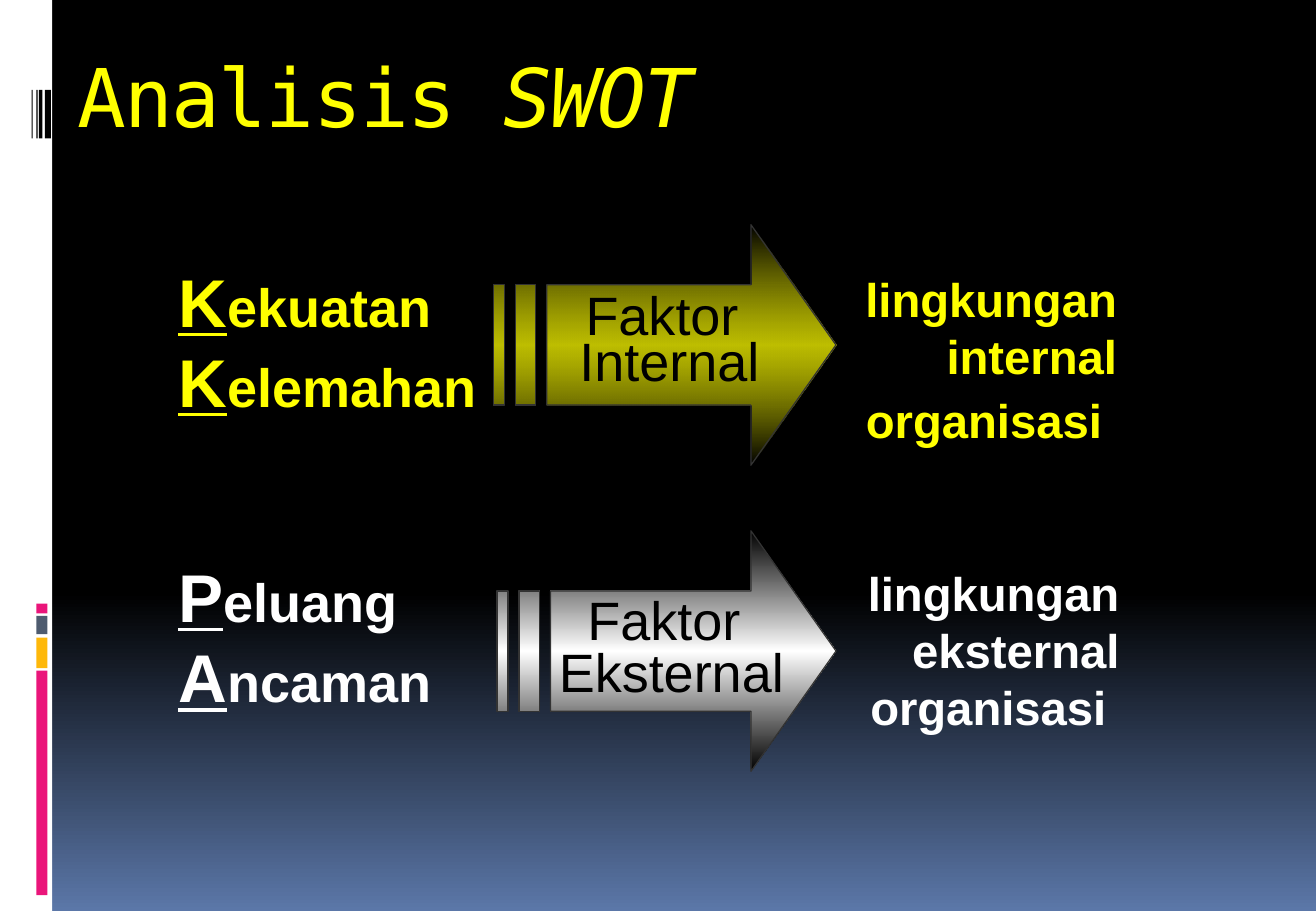
from lxml import etree
from pptx import Presentation
from pptx.dml.color import RGBColor
from pptx.enum.shapes import MSO_SHAPE
from pptx.enum.text import MSO_ANCHOR, PP_ALIGN
from pptx.oxml.ns import qn
from pptx.util import Inches, Pt

BLACK = RGBColor(0x00, 0x00, 0x00)
WHITE = RGBColor(0xFF, 0xFF, 0xFF)
YELLOW = RGBColor(0xFF, 0xFF, 0x00)
BLUE = RGBColor(0x5B, 0x77, 0xA8)
PINK = RGBColor(0xEA, 0x15, 0x7A)
AMBER = RGBColor(0xFE, 0xB8, 0x0A)
SLATE = RGBColor(0x4E, 0x5B, 0x6F)
OUTLINE = RGBColor(0x33, 0x33, 0x33)


def set_gradient(fill, element, stops):
    """Fill from top to bottom; stops are (percent, colour, opacity percent)."""
    fill.gradient()
    fill.gradient_angle = 270
    stop_list = element.find(".//" + qn("a:gsLst"))
    for old_stop in list(stop_list):
        stop_list.remove(old_stop)
    for percent, color, opacity in stops:
        stop = etree.SubElement(stop_list, qn("a:gs"), pos=str(percent * 1000))
        rgb = etree.SubElement(stop, qn("a:srgbClr"), val=str(color))
        if opacity < 100:
            etree.SubElement(rgb, qn("a:alpha"), val=str(opacity * 1000))


def write_text(shape, paragraphs, color, font="Arial", bold=False, wrap=True,
               align=PP_ALIGN.LEFT, anchor=MSO_ANCHOR.TOP, line_spacing=1.0,
               space_before=0, tracking=0):
    """Each paragraph is a list of (text, size, format flags) runs."""
    frame = shape.text_frame
    frame.word_wrap = wrap
    frame.vertical_anchor = anchor
    for index, runs in enumerate(paragraphs):
        para = frame.add_paragraph() if index else frame.paragraphs[0]
        para.alignment = align
        para.line_spacing = line_spacing
        para.space_before = Pt(space_before)
        for text, size, flags in runs:
            span = para.add_run()
            span.text = text
            span.font.name = font
            span.font.size = Pt(size)
            span.font.bold = bold
            span.font.italic = "i" in flags
            span.font.underline = "u" in flags
            span.font.color.rgb = color
            if tracking:
                span.font._element.set("spc", str(tracking * 100))


deck = Presentation()
deck.slide_width, deck.slide_height = Inches(10.83), Inches(7.5)
page = deck.slides.add_slide(deck.slide_layouts[6])
set_gradient(page.background.fill, page.element,
             [(0, BLACK, 100), (65, BLACK, 100), (100, BLUE, 100)])

# Side strip with its coloured blocks and thin bars
side_blocks = [
    (0, 0, 0.43, 7.5, WHITE),
    (0.3, 5.52, 0.09, 1.85, PINK),
    (0.3, 5.25, 0.09, 0.25, AMBER),
    (0.3, 5.07, 0.09, 0.15, SLATE),
    (0.3, 4.97, 0.09, 0.08, PINK),
    (0.37, 0.74, 0.05, 0.4, BLACK),
    (0.32, 0.74, 0.03, 0.4, BLACK),
    (0.3, 0.74, 0.01, 0.4, BLACK),
    (0.26, 0.74, 0.01, 0.4, BLACK),
]
for left, top, width, height, color in side_blocks:
    block = page.shapes.add_shape(MSO_SHAPE.RECTANGLE, Inches(left), Inches(top),
                                  Inches(width), Inches(height))
    block.shadow.inherit = False
    block.fill.solid()
    block.fill.fore_color.rgb = color
    block.line.fill.background()

title = page.shapes.add_textbox(Inches(0.54), Inches(0.29), Inches(9.71), Inches(1.06))
title.text_frame.margin_top = Inches(0.09)
write_text(title, [[("Analisis ", 48, ""), ("SWOT", 48, "i")]], YELLOW,
           font="DejaVu Sans Mono", tracking=-1)

# Striped arrows: left edge, top, middle colour and opacity, second word, line spacing
arrows = [
    (4.06, 1.85, YELLOW, 74, "Internal", 0.7),
    (4.09, 4.37, WHITE, 100, "Eksternal", 0.8),
]
for left, top, color, opacity, word, line_spacing in arrows:
    neck, tip = 6.18, 6.88
    shaft_top, middle, shaft_bottom, bottom = (top + step for step in (0.495, 0.99, 1.485, 1.98))
    body = left + 0.44
    contours = [[(neck, top), (neck, shaft_top), (body, shaft_top), (body, shaft_bottom),
                 (neck, shaft_bottom), (neck, bottom), (tip, middle)]]
    for start, end in ((0.18, 0.35), (0, 0.09)):
        contours.append([(left + start, shaft_top), (left + start, shaft_bottom),
                         (left + end, shaft_bottom), (left + end, shaft_top)])
    builder = page.shapes.build_freeform(Inches(neck), Inches(top))
    for index, contour in enumerate(contours):
        points = [(Inches(x), Inches(y)) for x, y in contour]
        if index:
            builder.move_to(*points[0])
        builder.add_line_segments(points[1:], close=True)
    arrow = builder.convert_to_shape()
    arrow.shadow.inherit = False
    set_gradient(arrow.fill, arrow.element,
                 [(0, BLACK, 100), (50, color, opacity), (100, BLACK, 100)])
    arrow.line.color.rgb = OUTLINE
    arrow.line.width = Pt(0.75)
    arrow.text_frame.margin_left = Inches(0.18)
    write_text(arrow, [[("Faktor ", 32, "")], [(word, 32, "")]], BLACK, wrap=False,
               align=PP_ALIGN.CENTER, anchor=MSO_ANCHOR.MIDDLE, line_spacing=line_spacing)

# The four factors, each with a large underlined initial
factors = [
    ("Kekuatan", 2.09, YELLOW),
    ("Kelemahan", 2.75, YELLOW),
    ("Peluang", 4.52, WHITE),
    ("Ancaman", 5.18, WHITE),
]
for name, top, color in factors:
    box = page.shapes.add_textbox(Inches(1.37), Inches(top), Inches(3.1), Inches(0.77))
    write_text(box, [[(name[0], 40, "u"), (name[1:], 32, "")]], color,
               bold=True, space_before=3.5)

environments = [
    (6.4, 2.18, 2.89, 1.57, YELLOW,
     [("lingkungan internal organisasi", 28, ""), (" ", 32, "")]),
    (6.49, 4.6, 2.82, 1.5, WHITE, [("lingkungan eksternal organisasi ", 28, "")]),
]
for left, top, width, height, color, runs in environments:
    box = page.shapes.add_textbox(Inches(left), Inches(top), Inches(width), Inches(height))
    write_text(box, [runs], color, bold=True, align=PP_ALIGN.RIGHT, space_before=3.5)

deck.save("out.pptx")
